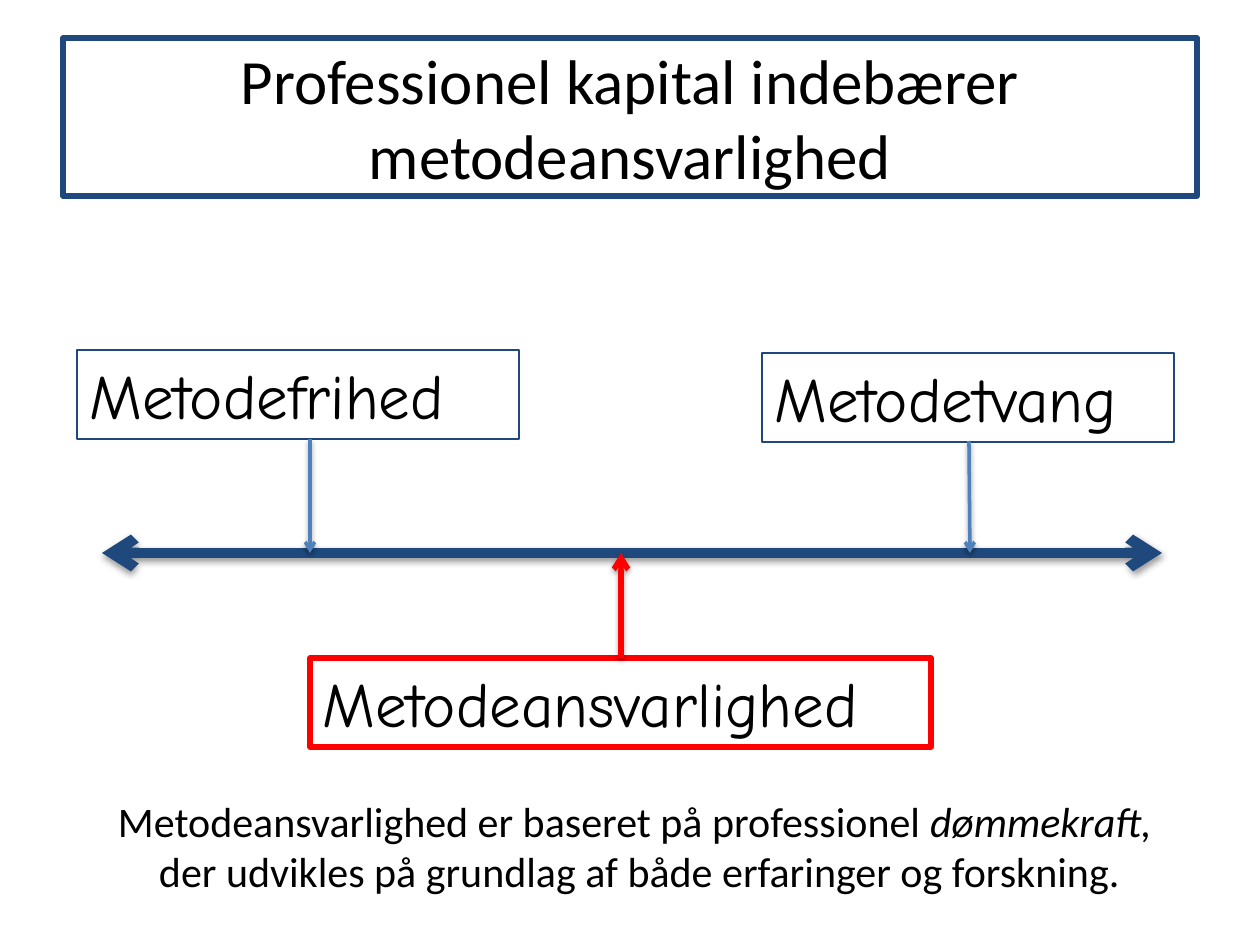
"""Build the slide on method responsibility as part of professional capital."""
import lxml.etree
import pptx
import pptx.dml.color
import pptx.enum.shapes
import pptx.enum.text
import pptx.oxml.ns
import pptx.util

EMU_PER_PX = 914400 / 126
NAVY, BLUE, RED, BLACK = "1F497D", "4F81BD", "FF0000", "000000"
ALIGN = pptx.enum.text.PP_ALIGN


def px(length):
    return pptx.util.Emu(round(length * EMU_PER_PX))


def color(value):
    return pptx.dml.color.RGBColor.from_string(value)


def child(parent, tag, **attributes):
    return lxml.etree.SubElement(parent, pptx.oxml.ns.qn(tag), attributes)


class Deck:
    """Holds the text style and the current slide."""

    heading_font, label_font = "Calibri", "Comic Neue"
    large, small = 36, 24

    def __init__(self, width, height):
        self.presentation = pptx.Presentation()
        self.presentation.slide_width = px(width)
        self.presentation.slide_height = px(height)
        self.slide = self.presentation.slides.add_slide(self.presentation.slide_layouts[5])

    def outline(self, line, value, width):
        line.color.rgb = color(value)
        line.width = pptx.util.Pt(width)

    def set_text(self, paragraph, runs, font, size, align):
        paragraph.alignment = align
        paragraph.font.name = font
        paragraph.font.size = pptx.util.Pt(size)
        paragraph.font.color.rgb = color(BLACK)
        for text, italic in runs:
            run = paragraph.add_run()
            run.text = text
            if italic:
                run.font.italic = True

    def title(self, text, left, top, width, height):
        heading = self.slide.shapes.title
        heading.left, heading.top = px(left), px(top)
        heading.width, heading.height = px(width), px(height)
        self.outline(heading.line, NAVY, 3)
        frame = heading.text_frame
        frame.auto_size = pptx.enum.text.MSO_AUTO_SIZE.NONE
        frame.vertical_anchor = pptx.enum.text.MSO_ANCHOR.MIDDLE
        self.set_text(frame.paragraphs[0], [(text, False)],
                      self.heading_font, self.large, ALIGN.CENTER)

    def text_box(self, left, top, width, height):
        box = self.slide.shapes.add_textbox(px(left), px(top), px(width), px(height))
        box.text_frame.word_wrap = True
        return box

    def label(self, text, left, top, width, border, weight):
        box = self.text_box(left, top, width, 89)
        self.outline(box.line, border, weight)
        self.set_text(box.text_frame.paragraphs[0], [(text, False)],
                      self.label_font, self.large, ALIGN.LEFT)

    def caption(self, lines, left, top, width, height):
        frame = self.text_box(left, top, width, height).text_frame
        for index, runs in enumerate(lines):
            paragraph = frame.add_paragraph() if index else frame.paragraphs[0]
            self.set_text(paragraph, runs, self.heading_font, self.small, ALIGN.CENTER)

    def arrow(self, start, end, value, weight, ends=("a:tailEnd",)):
        arrow = self.slide.shapes.add_connector(
            pptx.enum.shapes.MSO_CONNECTOR.STRAIGHT, *map(px, start + end))
        self.outline(arrow.line, value, weight)
        properties = arrow._element.spPr
        for tag in ends:
            child(properties.find(pptx.oxml.ns.qn("a:ln")), tag, type="arrow")
        effects = child(properties, "a:effectLst")
        shadow = child(effects, "a:outerShdw", blurRad="40000", dist="20000",
                       dir="5400000", rotWithShape="0")
        child(child(shadow, "a:srgbClr", val=BLACK), "a:alpha", val="38000")


def main():
    deck = Deck(1260, 945)
    axis = 553
    deck.title("Professionel kapital indebærer metodeansvarlighed", 63, 38, 1134, 158)
    deck.arrow((102, axis), (1162, axis), NAVY, 6, ("a:headEnd", "a:tailEnd"))
    deck.label("Metodefrihed", 77, 350, 442, NAVY, 0.75)
    deck.label("Metodetvang", 762, 353, 412, NAVY, 0.75)
    deck.label("Metodeansvarlighed", 310, 658, 621, RED, 3)
    deck.caption([
        [("Metodeansvarlighed er baseret på professionel ", False), ("dømmekraft, ", True)],
        [("der udvikles på grundlag af både erfaringer og forskning.", False)],
    ], 102, 789, 1075, 115)
    deck.arrow((969, 441), (970, axis), BLUE, 2)
    deck.arrow((310, 439), (310, axis), BLUE, 2)
    deck.arrow((621, 658), (621, axis), RED, 3)
    deck.presentation.save("out.pptx")


if __name__ == "__main__":
    main()
